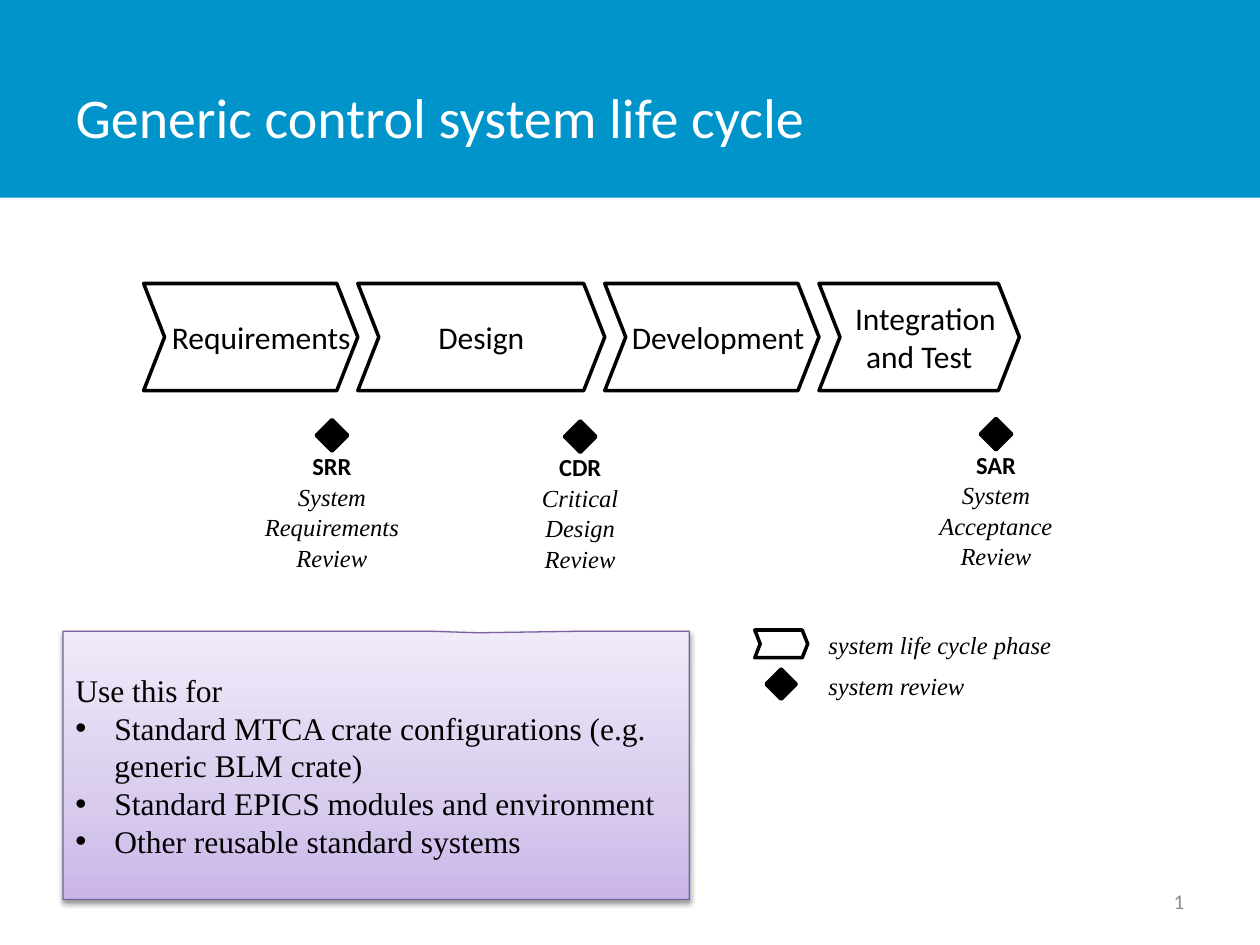
from dataclasses import dataclass
from itertools import accumulate

from lxml import etree
from pptx import Presentation
from pptx import util as u
from pptx.dml.color import RGBColor
from pptx.enum import shapes, text
from pptx.oxml import parse_xml
from pptx.oxml.ns import nsdecls, qn

COLUMNS, ROWS = 100, 75
SANS, SERIF = "Calibri", "Times New Roman"
BLACK, WHITE = "000000", "FFFFFF"
LEFT, CENTER, RIGHT = text.PP_ALIGN.LEFT, text.PP_ALIGN.CENTER, text.PP_ALIGN.RIGHT
TOP, MIDDLE = text.MSO_ANCHOR.TOP, text.MSO_ANCHOR.MIDDLE
SHAPE = shapes.MSO_SHAPE


@dataclass
class Area:
    column: float
    row: float
    columns: float
    rows: float

    def lengths(self) -> list[int]:
        across, down = deck.slide_width / COLUMNS, deck.slide_height / ROWS
        return [round(n) for n in (self.column * across, self.row * down,
                                   self.columns * across, self.rows * down)]


@dataclass
class Line:
    words: str
    size: float = 18
    face: str = SANS
    color: str = BLACK
    bold: bool = False
    italic: bool = False
    align: int = CENTER
    indent: float = 0
    bullet: bool = False
    spacing: float = 1


@dataclass
class Phase:
    columns: float
    lines: list[Line]


@dataclass
class Review:
    center: float
    row: float
    code: str
    name: list[str]


def rgb(color: str) -> RGBColor:
    return RGBColor.from_string(color)


def write(frame, lines: list[Line], anchor: int = MIDDLE, wrap: bool = True) -> None:
    frame.word_wrap = wrap
    frame.vertical_anchor = anchor
    for number, line in enumerate(lines):
        para = frame.add_paragraph() if number else frame.paragraphs[0]
        para.text = line.words
        para.alignment = line.align
        para.line_spacing = line.spacing
        if line.indent:
            settings = para._p.get_or_add_pPr()
            settings.set("marL", str(u.Inches(line.indent)))
            settings.set("indent", str(-u.Inches(line.indent) if line.bullet else 0))
            if line.bullet:
                etree.SubElement(settings, qn("a:buFont")).set("typeface", "Arial")
                etree.SubElement(settings, qn("a:buChar")).set("char", "•")
        font = para.font
        font.size, font.name = u.Pt(line.size), line.face
        font.bold, font.italic = line.bold, line.italic
        font.color.rgb = rgb(line.color)


def draw(kind: int, area: Area, fill: str, line: str | None = BLACK, weight: float = 2):
    shape = slide.shapes.add_shape(kind, *area.lengths())
    shape.shadow.inherit = False
    shape.fill.solid()
    shape.fill.fore_color.rgb = rgb(fill)
    if line:
        shape.line.color.rgb = rgb(line)
        shape.line.width = u.Pt(weight)
    else:
        shape.line.fill.background()
    return shape


def label(area: Area, lines: list[Line], anchor: int = MIDDLE):
    box = slide.shapes.add_textbox(*area.lengths())
    frame = box.text_frame
    frame.margin_left = frame.margin_right = frame.margin_top = frame.margin_bottom = 0
    write(frame, lines, anchor)
    return box


def chevron(area: Area):
    shape = draw(SHAPE.CHEVRON, area, WHITE)
    shape.adjustments[0] = 0.196
    return shape


def draw_phases(phases: list[Phase], column: float, row: float, rows: float) -> None:
    starts = accumulate((phase.columns for phase in phases), initial=column)
    for phase, start in zip(phases, starts):
        shape = chevron(Area(start, row, phase.columns, rows))
        write(shape.text_frame, phase.lines, wrap=False)


def draw_review(review: Review) -> None:
    side, width = 2.5, 16
    draw(SHAPE.DIAMOND, Area(review.center - side / 2, review.row, side, side), BLACK)
    lines = [Line(review.code, 14, bold=True)]
    lines += [Line(word, 14, SERIF, italic=True, spacing=1.04) for word in review.name]
    label(Area(review.center - width / 2, review.row + side, width, 10), lines, TOP)


def draw_callout(area: Area, lines: list[Line]) -> None:
    box = draw(SHAPE.RECTANGULAR_CALLOUT, area, WHITE, "7D60A0", 0.75)
    box.adjustments[0], box.adjustments[1] = 0.163, -0.494
    box.fill.gradient()
    box.fill.gradient_angle = 90
    properties = box.element.spPr
    stops = properties.find(".//" + qn("a:gsLst"))
    for stop in list(stops):
        stops.remove(stop)
    for share, color in ((0, "C9B5E8"), (35, "D8CBEE"), (100, "F0EAF9")):
        stops.append(parse_xml(
            f'<a:gs {nsdecls("a")} pos="{share * 1000}"><a:srgbClr val="{color}"/></a:gs>'))
    properties.find(qn("a:effectLst")).append(parse_xml(
        f'<a:outerShdw {nsdecls("a")} blurRad="{u.Pt(3.1)}" dist="{u.Pt(1.6)}" '
        'dir="5400000" rotWithShape="0"><a:srgbClr val="000000">'
        '<a:alpha val="38000"/></a:srgbClr></a:outerShdw>'))
    write(box.text_frame, lines)


def draw_page_number(area: Area) -> None:
    box = label(area, [Line("5", 12, color="8C8C8C", align=RIGHT)])
    span = box.text_frame.paragraphs[0].runs[0]._r
    span.tag = qn("a:fld")
    span.set("id", "{B6F15528-21DE-4FAA-801E-634DDDAF4B2B}")
    span.set("type", "slidenum")


deck = Presentation()
deck.slide_width, deck.slide_height = u.Inches(10), u.Inches(7.5)
slide = deck.slides.add_slide(deck.slide_layouts[5])

title = slide.shapes.title
title.left, title.top, title.width, title.height = Area(5, 3, 78.1, 12.5).lengths()
write(title.text_frame,
      [Line("Generic control system life cycle", 32, color=WHITE, align=LEFT)])
banner = draw(SHAPE.RECTANGLE, Area(0, 0, COLUMNS, 15.7), "0094CA", None)
title.element.addprevious(banner.element)

draw_phases([
    Phase(17, [Line("Requirements", indent=0.17)]),
    Phase(19.6, [Line("Design")]),
    Phase(17, [Line("Development", indent=0.1)]),
    Phase(15.9, [Line("Integration", indent=0.1), Line("and Test")]),
], 11.4, 22.5, 8.5)

for review in (
    Review(26.35, 33.3, "SRR", ["System", "Requirements", "Review"]),
    Review(46.05, 33.4, "CDR", ["Critical", "Design", "Review"]),
    Review(79.05, 33.2, "SAR", ["System", "Acceptance", "Review"]),
):
    draw_review(review)

chevron(Area(59.9, 50, 4.2, 2.2))
draw(SHAPE.DIAMOND, Area(60.8, 53.1, 2.4, 2.4), BLACK)
for words, row in (("system life cycle phase", 50), ("system review", 53.2)):
    label(Area(65.75, row, 25, 2.4), [Line(words, 14, SERIF, italic=True, align=LEFT)])

uses = ["Standard MTCA crate configurations (e.g. generic BLM crate)",
        "Standard EPICS modules and environment",
        "Other reusable standard systems"]
draw_callout(Area(5, 50.1, 49.7, 21.3), [
    Line("Use this for", face=SERIF, align=LEFT),
    *(Line(use, face=SERIF, align=LEFT, indent=0.31, bullet=True) for use in uses),
])
draw_page_number(Area(71.7, 69.5, 22.3, 4))

deck.save("out.pptx")
